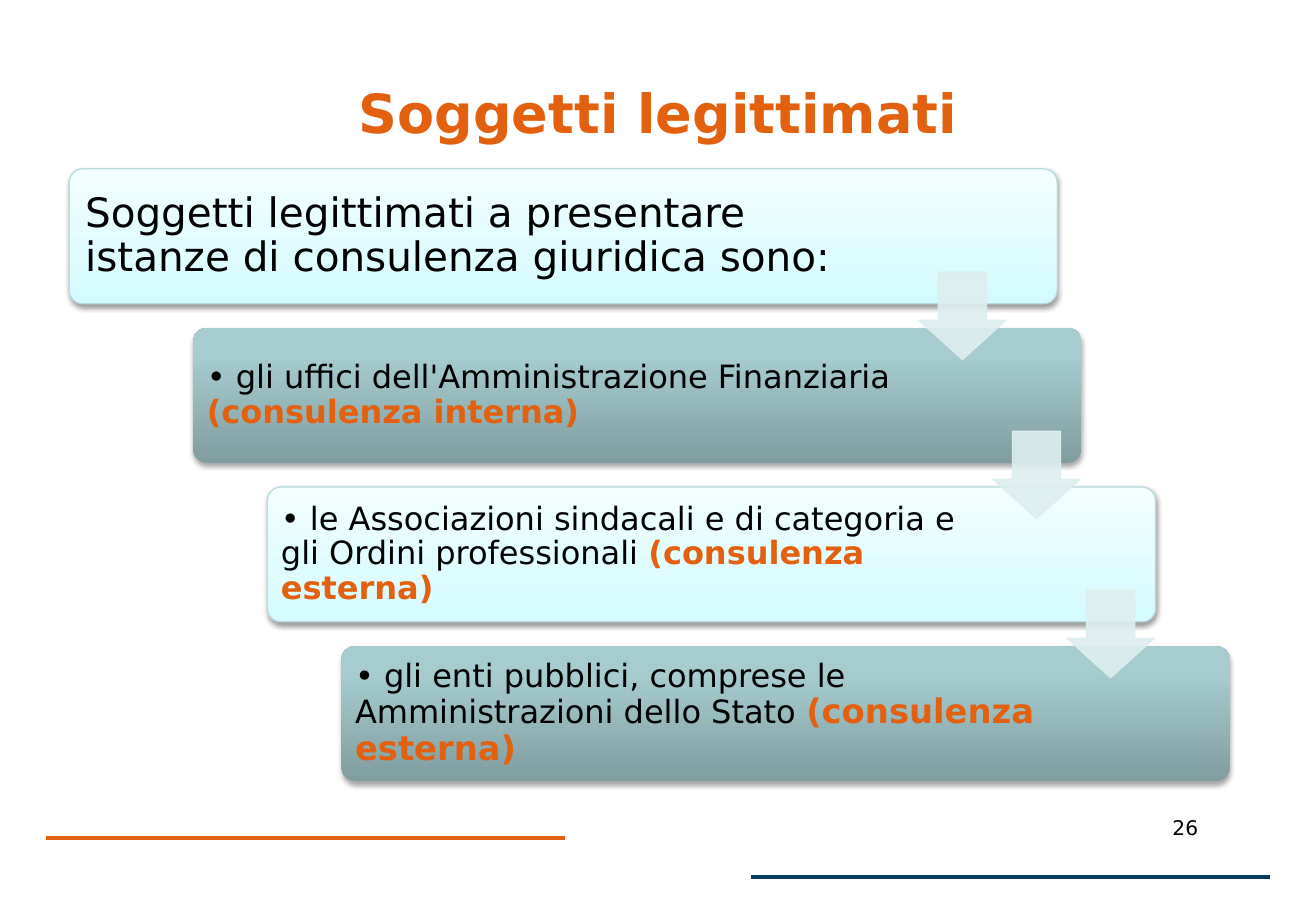
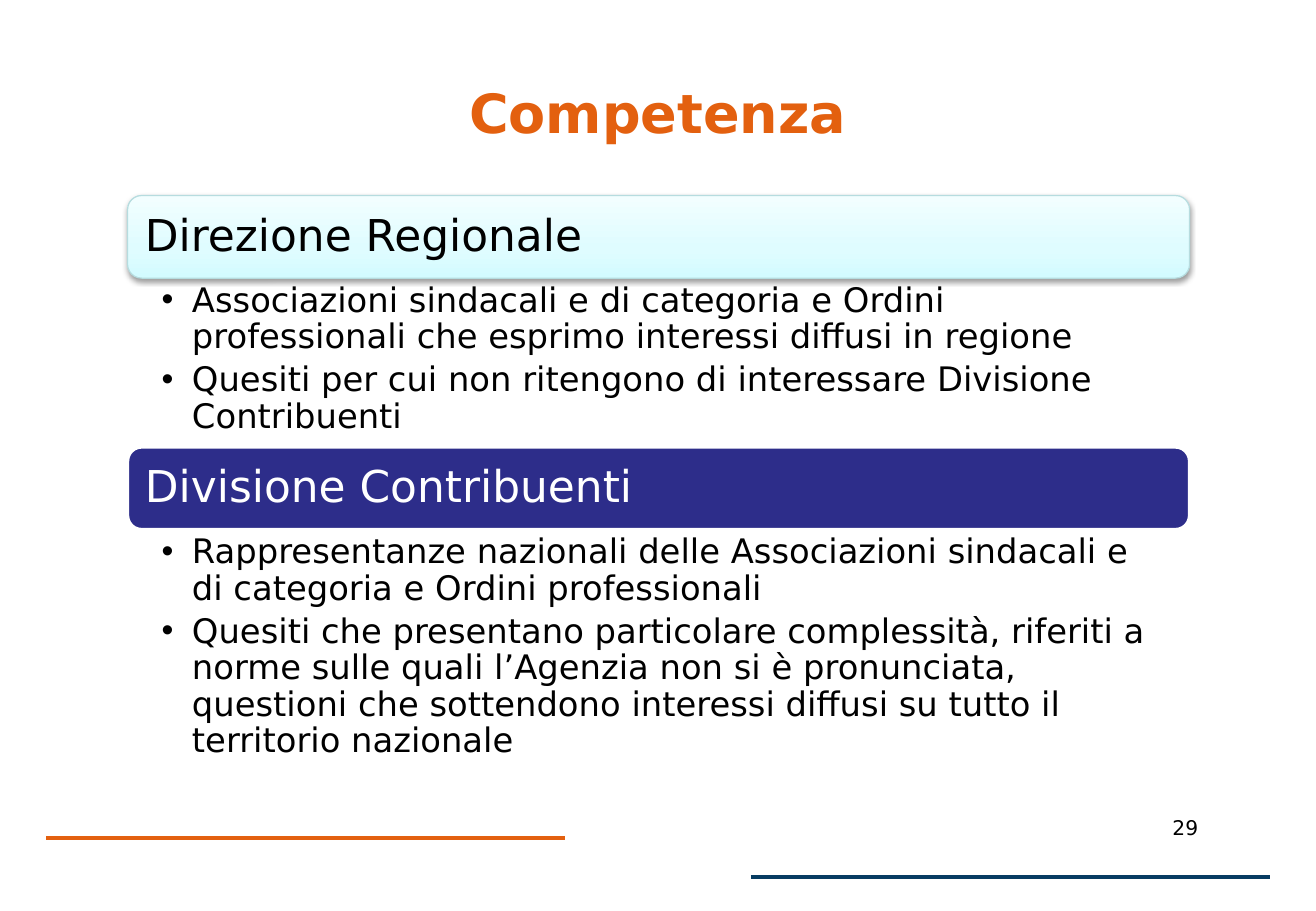
from dataclasses import dataclass

from lxml import etree
from pptx import Presentation
from pptx.dml.color import RGBColor
from pptx.enum.shapes import MSO_CONNECTOR, MSO_SHAPE
from pptx.enum.text import MSO_ANCHOR, MSO_AUTO_SIZE, PP_ALIGN
from pptx.oxml.ns import qn
from pptx.util import Inches, Pt

ROUND_RECT = MSO_SHAPE.ROUNDED_RECTANGLE
DOWN_ARROW = MSO_SHAPE.DOWN_ARROW
STRAIGHT = MSO_CONNECTOR.STRAIGHT
MIDDLE, TOP = MSO_ANCHOR.MIDDLE, MSO_ANCHOR.TOP
LEFT, CENTER = PP_ALIGN.LEFT, PP_ALIGN.CENTER

FONT = "DejaVu Sans"
BLACK = RGBColor(0x00, 0x00, 0x00)
WHITE = RGBColor(0xFF, 0xFF, 0xFF)
ORANGE = RGBColor(0xE3, 0x60, 0x0F)
NAVY = RGBColor(0x07, 0x3C, 0x62)
INDIGO = RGBColor(0x2D, 0x2D, 0x8A)
PALE_EDGE = RGBColor(0xB6, 0xDC, 0xDF)
ARROW = RGBColor(0xDD, 0xEF, 0xF0)
AQUA_STOPS = (
    (0, RGBColor(0xD3, 0xFB, 0xFF)),
    (35, RGBColor(0xDF, 0xFC, 0xFF)),
    (100, RGBColor(0xF2, 0xFE, 0xFF)),
)
TEAL_STOPS = (
    (0, RGBColor(0x80, 0x9D, 0xA0)),
    (80, RGBColor(0xA6, 0xCC, 0xD0)),
    (100, RGBColor(0xA6, 0xCE, 0xD2)),
)


@dataclass(frozen=True)
class Style:
    fill: RGBColor | tuple
    line: RGBColor | None = None
    line_width: float = 0.75
    shadow_distance: float = 0
    shadow_opacity: int = 0
    text: RGBColor = BLACK


@dataclass(frozen=True)
class Box:
    left: float
    top: float
    width: float
    height: float

    def emu(self) -> list:
        return [Inches(v) for v in (self.left, self.top, self.width, self.height)]


@dataclass(frozen=True)
class Run:
    text: str
    size: float
    color: RGBColor = BLACK
    bold: bool = False


@dataclass(frozen=True)
class Section:
    heading: str
    style: Style
    top: float
    list_height: float
    items: tuple


AQUA = Style(AQUA_STOPS, PALE_EDGE, 0.75, 1.6, 38)
TEAL = Style(TEAL_STOPS, shadow_distance=1.8, shadow_opacity=35)
SOLID = Style(INDIGO, WHITE, 2, text=WHITE)

TITLE_BOX = Box(0.54, 0.3, 9.75, 1.25)
NUMBER_BOX = Box(9.28, 6.66, 0.95, 0.39)
FOOTER_LINES = ((0.38, 6.9, ORANGE), (6.18, 7.22, NAVY))
FOOTER_LENGTH = 4.27

STEP_TOP, STEP_HEIGHT = 1.39, 1.11
STEP_DX, STEP_DY = 0.61, 1.31
STEPS = (
    (AQUA, (Run("Soggetti legittimati a presentare istanze di consulenza "
                "giuridica sono:", 24),)),
    (TEAL, (Run("• gli uffici dell'Amministrazione Finanziaria ", 19),
            Run("(consulenza interna)", 19, ORANGE, True))),
    (AQUA, (Run("• le Associazioni sindacali e di categoria e gli Ordini "
                "professionali ", 19),
            Run("(consulenza esterna)", 19, ORANGE, True))),
    (TEAL, (Run("• gli enti pubblici, comprese le Amministrazioni dello Stato ", 19),
            Run("(consulenza esterna)", 20, ORANGE, True))),
)

SECTION_LEFT, SECTION_WIDTH, HEADING_HEIGHT = 1.05, 8.74, 0.68
SECTIONS = (
    Section("Direzione Regionale", AQUA, 1.61, 1.38, (
        "Associazioni sindacali e di categoria e Ordini professionali che "
        "esprimo interessi diffusi in regione",
        "Quesiti per cui non ritengono di interessare Divisione Contribuenti",
    )),
    Section("Divisione Contribuenti", SOLID, 3.68, 2, (
        "Rappresentanze nazionali delle Associazioni sindacali e di categoria "
        "e Ordini professionali",
        "Quesiti che presentano particolare complessità, riferiti a norme sulle "
        "quali l’Agenzia non si è pronunciata, questioni che sottendono "
        "interessi diffusi su tutto il territorio nazionale",
    )),
)


def add_runs(p, runs) -> None:
    for run in runs:
        r = p.add_run()
        r.text = run.text
        r.font.name = FONT
        r.font.size = Pt(run.size)
        r.font.bold = run.bold
        r.font.color.rgb = run.color


def set_frame(tf, anchor, margins) -> None:
    """Margins are left, top, right, bottom in inches."""
    tf.word_wrap = True
    tf.auto_size = MSO_AUTO_SIZE.NONE
    tf.vertical_anchor = anchor
    (tf.margin_left, tf.margin_top,
     tf.margin_right, tf.margin_bottom) = [Inches(m) for m in margins]


def place(shape, box: Box) -> None:
    shape.left, shape.top, shape.width, shape.height = box.emu()


def sub(parent, tag: str, **attributes):
    return etree.SubElement(parent, qn(tag), {k: str(v) for k, v in attributes.items()})


def set_gradient(fill, stops) -> None:
    """Run the stops from the bottom edge to the top edge."""
    fill.gradient()
    fill.gradient_angle = 90
    stop_list = fill._xPr.find(".//" + qn("a:gsLst"))
    for old in list(stop_list):
        stop_list.remove(old)
    for percent, color in stops:
        stop = sub(stop_list, "a:gs", pos=percent * 1000)
        sub(stop, "a:srgbClr", val=color)


def add_panel(s, box: Box, style: Style, runs, margins, corner: float) -> None:
    sp = s.shapes.add_shape(ROUND_RECT, *box.emu())
    sp.adjustments[0] = corner
    if isinstance(style.fill, RGBColor):
        sp.fill.solid()
        sp.fill.fore_color.rgb = style.fill
    else:
        set_gradient(sp.fill, style.fill)
    if style.line is None:
        sp.line.fill.background()
    else:
        sp.line.color.rgb = style.line
        sp.line.width = Pt(style.line_width)
    sp.shadow.inherit = False
    if style.shadow_opacity:
        effects = sp._element.spPr.find(qn("a:effectLst"))
        shadow = sub(effects, "a:outerShdw", blurRad=Pt(3.1),
                     dist=Pt(style.shadow_distance), dir=5400000, rotWithShape=0)
        color = sub(shadow, "a:srgbClr", val=BLACK)
        sub(color, "a:alpha", val=style.shadow_opacity * 1000)
    set_frame(sp.text_frame, MIDDLE, margins)
    p = sp.text_frame.paragraphs[0]
    p.alignment = LEFT
    p.line_spacing = 0.9
    add_runs(p, runs)


def add_arrow(s, box: Box) -> None:
    sp = s.shapes.add_shape(DOWN_ARROW, *box.emu())
    sp.adjustments[0], sp.adjustments[1] = 0.55, 0.45
    sp.fill.solid()
    sp.fill.fore_color.rgb = ARROW
    sp.line.color.rgb = ARROW
    sp.line.width = Pt(0.75)
    sp.shadow.inherit = False
    for color in sp._element.spPr.iter(qn("a:srgbClr")):
        sub(color, "a:alpha", val=90000)


def add_base_slide(prs, layout_index: int, title: str, number: str):
    """Add a slide with title, page number and footer lines."""
    s = prs.slides.add_slide(prs.slide_layouts[layout_index])
    place(s.shapes.title, TITLE_BOX)
    tf = s.shapes.title.text_frame
    set_frame(tf, MIDDLE, (0.1, 0.05, 0.1, 0.05))
    tf.paragraphs[0].alignment = CENTER
    add_runs(tf.paragraphs[0], [Run(title, 32, ORANGE, True)])

    for left, y, color in FOOTER_LINES:
        line = s.shapes.add_connector(STRAIGHT, Inches(left), Inches(y),
                                      Inches(left + FOOTER_LENGTH), Inches(y))
        line.line.color.rgb = color
        line.line.width = Pt(2)
        sub(line._element.spPr, "a:effectLst")

    tf = s.shapes.add_textbox(*NUMBER_BOX.emu()).text_frame
    set_frame(tf, TOP, (0.1, 0.05, 0.1, 0.05))
    tf.paragraphs[0].alignment = CENTER
    add_runs(tf.paragraphs[0], [Run(number, 12)])
    return s


def fill_list(body, box: Box, items) -> None:
    place(body, box)
    tf = body.text_frame
    set_frame(tf, TOP, (0.28, 0.04, 0.2, 0.04))
    for i, item in enumerate(items):
        p = tf.add_paragraph() if i else tf.paragraphs[0]
        pPr = p._p.get_or_add_pPr()
        pPr.set("marL", str(Inches(0.25)))
        pPr.set("indent", str(Inches(-0.25)))
        p.alignment = LEFT
        p.line_spacing = 0.9
        p.space_before = Pt(0)
        p.space_after = Pt(4)
        add_runs(p, [Run(item, 20)])


def build_subjects(prs) -> None:
    s = add_base_slide(prs, 5, "Soggetti legittimati", "26")
    for i, (style, runs) in enumerate(STEPS):
        left, width, pad, right = ((0.98 + STEP_DX * i, 7.31, 0.08, 1.42) if i
                                   else (0.57, 8.13, 0.1, 1.47))
        box = Box(left, STEP_TOP + STEP_DY * i, width, STEP_HEIGHT)
        add_panel(s, box, style, runs, (pad, pad, right, pad), 0.1)
    for i in range(len(STEPS) - 1):
        add_arrow(s, Box(7.56 + STEP_DX * i, 2.24 + STEP_DY * i, 0.72, 0.72))


def build_competence(prs) -> None:
    s = add_base_slide(prs, 3, "Competenza", "29")
    for i, section in enumerate(SECTIONS):
        heading = Box(SECTION_LEFT, section.top, SECTION_WIDTH, HEADING_HEIGHT)
        add_panel(s, heading, section.style,
                  [Run(section.heading, 26, section.style.text)], (0.11,) * 4, 0.17)
        body = Box(SECTION_LEFT, section.top + HEADING_HEIGHT,
                   SECTION_WIDTH, section.list_height)
        fill_list(s.placeholders[i + 1], body, section.items)


def main() -> None:
    prs = Presentation()
    prs.slide_width, prs.slide_height = Inches(10.83), Inches(7.5)
    build_subjects(prs)
    build_competence(prs)
    prs.save("out.pptx")


if __name__ == "__main__":
    main()
